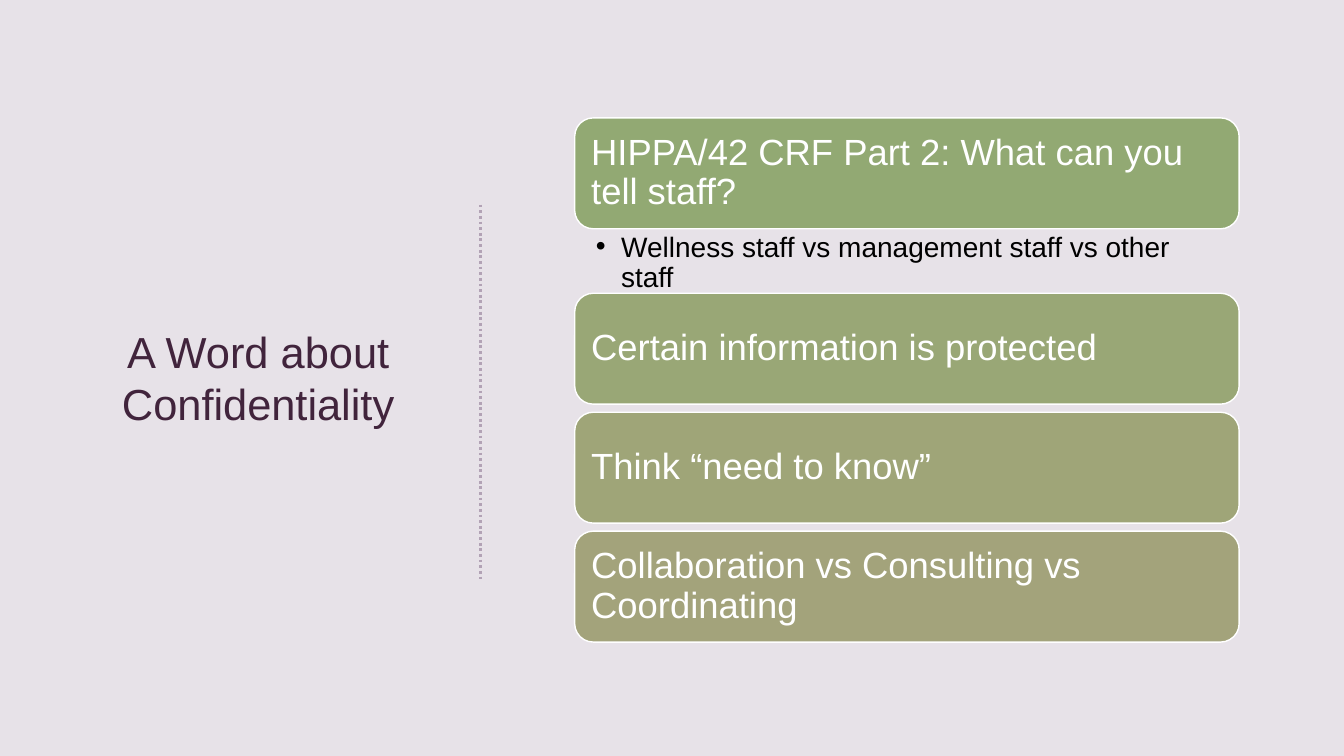
from lxml import etree
from pptx import Presentation
from pptx.dml.color import RGBColor
from pptx.enum.dml import MSO_LINE_DASH_STYLE as Dash
from pptx.enum.shapes import MSO_CONNECTOR as Connector, MSO_SHAPE as Shape
from pptx.enum.text import MSO_ANCHOR as Anchor, PP_ALIGN as Align
from pptx.oxml.ns import qn
from pptx.util import Inches, Pt

BACKGROUND = RGBColor(0xE7, 0xE2, 0xE8)
PLUM = RGBColor(0x41, 0x24, 0x3C)
MAUVE = RGBColor(0xB2, 0xA2, 0xB5)
WHITE = RGBColor(0xFF, 0xFF, 0xFF)
BLACK = RGBColor(0x00, 0x00, 0x00)

CARD_LEFT, CARD_WIDTH, CARD_HEIGHT = 5.7, 6.59, 1.1
FIRST_CARD_TOP, SECOND_CARD_TOP, CARD_STEP = 1.17, 2.91, 1.18
CARDS = [
    ("HIPPA/42 CRF Part 2: What can you tell staff?", RGBColor(0x92, 0xA9, 0x73)),
    ("Certain information is protected", RGBColor(0x99, 0xA7, 0x76)),
    ("Think “need to know”", RGBColor(0x9F, 0xA5, 0x78)),
    ("Collaboration vs Consulting vs Coordinating", RGBColor(0xA3, 0xA3, 0x7B)),
]


def write_text(shape, text, size, color, margins, anchor=Anchor.MIDDLE,
               align=Align.LEFT, line_spacing=0.9):
    """Fill the shape with one paragraph; margins are left, top, right, bottom in inches."""
    frame = shape.text_frame
    frame.text = text
    frame.word_wrap = True
    frame.vertical_anchor = anchor
    (frame.margin_left, frame.margin_top,
     frame.margin_right, frame.margin_bottom) = map(Inches, margins)
    paragraph = frame.paragraphs[0]
    paragraph.alignment = align
    paragraph.line_spacing = line_spacing
    font = paragraph.runs[0].font
    font.name, font.size = "Arial", Pt(size)
    font.color.rgb = color
    return paragraph


def add_title(slide, text):
    box = slide.shapes.add_textbox(Inches(1.04), Inches(1.73), Inches(3.04), Inches(4.03))
    write_text(box, text, 31, PLUM, (0.1, 0.05, 0.1, 0.05),
               align=Align.CENTER, line_spacing=1.0)


def add_divider(slide):
    divider = slide.shapes.add_connector(
        Connector.STRAIGHT, Inches(4.77), Inches(2.03), Inches(4.77), Inches(5.74))
    divider.line.color.rgb = MAUVE
    divider.line.width = Pt(2)
    divider.line.dash_style = Dash.ROUND_DOT
    etree.SubElement(divider.element.spPr, qn("a:effectLst"))


def add_card(slide, top, text, color):
    card = slide.shapes.add_shape(
        Shape.ROUNDED_RECTANGLE, Inches(CARD_LEFT), Inches(top),
        Inches(CARD_WIDTH), Inches(CARD_HEIGHT))
    card.shadow.inherit = False
    card.fill.solid()
    card.fill.fore_color.rgb = color
    card.line.color.rgb = WHITE
    card.line.width = Pt(1)
    write_text(card, text, 26, WHITE, (0.11, 0.11, 0.11, 0.11))


def add_bullet(slide, top, text):
    box = slide.shapes.add_textbox(
        Inches(CARD_LEFT), Inches(top), Inches(CARD_WIDTH), Inches(0.65))
    paragraph = write_text(box, text, 20, BLACK, (0.21, 0.04, 0.2, 0.04), anchor=Anchor.TOP)
    properties = paragraph._p.get_or_add_pPr()
    properties.set("marL", str(Inches(0.25)))
    properties.set("indent", str(Inches(-0.25)))
    etree.SubElement(properties, qn("a:buFont"), typeface="Arial")
    etree.SubElement(properties, qn("a:buChar"), char="•")


def main():
    presentation = Presentation()
    presentation.slide_width, presentation.slide_height = Inches(13.33), Inches(7.5)
    slide = presentation.slides.add_slide(presentation.slide_layouts[6])
    slide.background.fill.solid()
    slide.background.fill.fore_color.rgb = BACKGROUND

    add_title(slide, "A Word about Confidentiality")
    add_divider(slide)
    for index, (text, color) in enumerate(CARDS):
        top = SECOND_CARD_TOP + (index - 1) * CARD_STEP if index else FIRST_CARD_TOP
        add_card(slide, top, text, color)
    add_bullet(slide, FIRST_CARD_TOP + CARD_HEIGHT,
               "Wellness staff vs management staff vs other staff")
    presentation.save("out.pptx")


if __name__ == "__main__":
    main()
